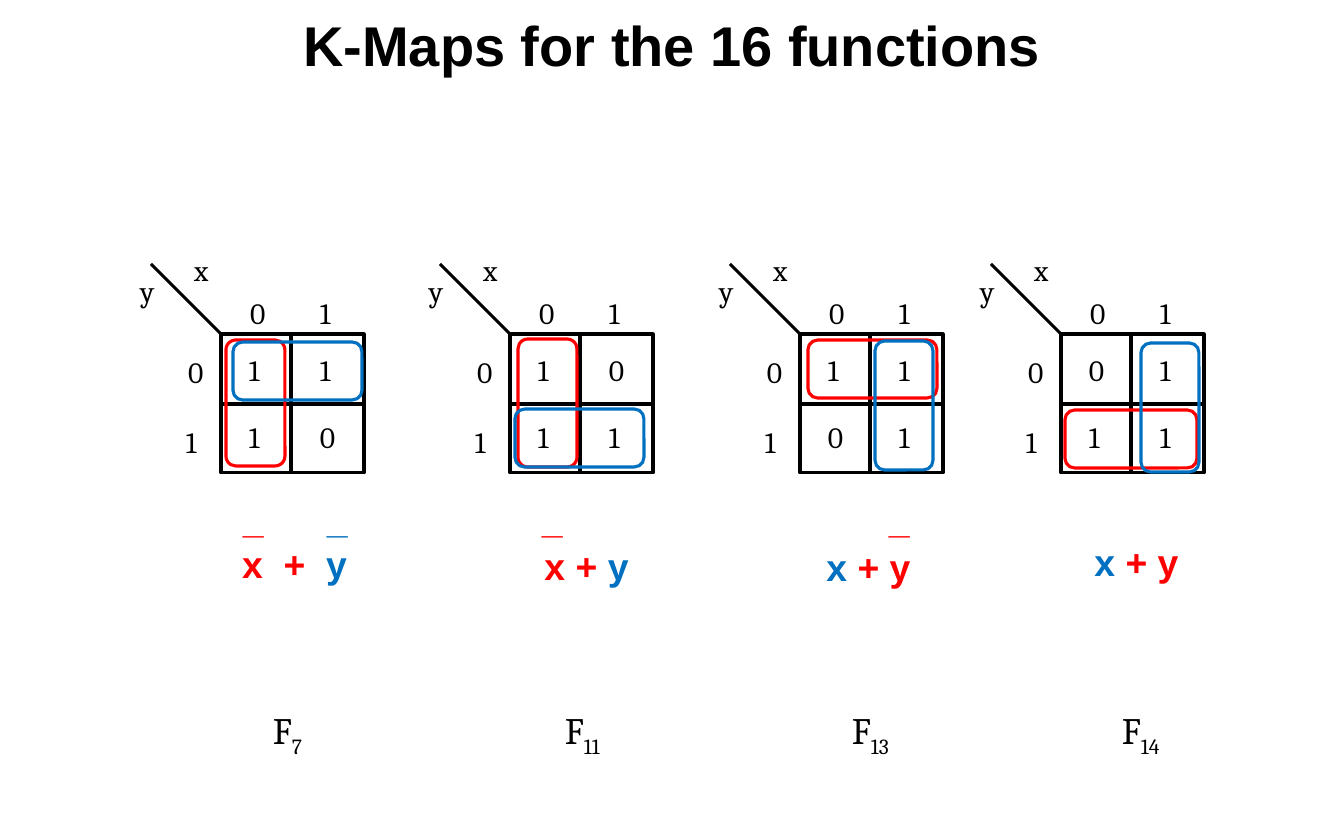
from dataclasses import dataclass

from pptx import Presentation
from pptx import util as u
from pptx.dml.color import RGBColor
from pptx.enum import shapes, text
from pptx.oxml.ns import qn


@dataclass(frozen=True)
class Theme:
    black: RGBColor = RGBColor(0, 0, 0)
    white: RGBColor = RGBColor(255, 255, 255)
    red: RGBColor = RGBColor(255, 0, 0)
    blue: RGBColor = RGBColor(0, 0x70, 0xC0)
    sans: str = "Arial"
    serif: str = "Cambria"
    title_size: int = 36
    formula_size: int = 24
    label_size: int = 19
    line_width: int = 2


THEME = Theme()
SLIDE_SIZE = (1344, 840)
TITLE = "K-Maps for the 16 functions"
TITLE_BOX = (112, 2, 1120, 84)

# Loops and bars are measured from the left of their grid; loops also from its top.
MAPS = [
    dict(left=221, cells=["11", "10"], red_loop=(5, 6, 59, 126), blue_loop=(12, 8, 129, 58),
         formula=[("x  +  ", THEME.red), ("y", THEME.blue)], formula_at=(-21, 536),
         bars=[(11, THEME.red), (95, THEME.blue)], number="7", name_at=41),
    dict(left=510, cells=["10", "11"], red_loop=(8, 5, 59, 128), blue_loop=(5, 75, 129, 58),
         formula=[("x + ", THEME.red), ("y", THEME.blue)], formula_at=(-18, 538),
         bars=[(21, THEME.red)], number="11", name_at=44),
    dict(left=800, cells=["11", "01"], red_loop=(8, 6, 129, 58), blue_loop=(75, 7, 58, 129),
         formula=[("x", THEME.blue), (" + y", THEME.red)], formula_at=(-26, 539),
         bars=[(78, THEME.red)], number="13", name_at=41),
    dict(left=1061, cells=["01", "11"], red_loop=(4, 76, 132, 58), blue_loop=(80, 9, 58, 129),
         formula=[("x", THEME.blue), (" + y", THEME.red)], formula_at=(-19, 534),
         bars=[], number="14", name_at=50),
]

GRID_TOP, GRID_WIDTH, GRID_HEIGHT, HALF = 334, 143, 139, 70
LABELS = [("y", -81, -61), ("x", -27, -82), ("0", -33, 20), ("1", -35, 90),
          ("0", 29, -39), ("1", 99, -39)]
CELL_LEFTS, CELL_TOPS = (28, 99), (18, 85)
LABEL_WIDTH, CELL_WIDTH, LABEL_HEIGHT = 22, 15, 36
FORMULA_WIDTH, BAR_WIDTH, FORMULA_HEIGHT = 189, 39, 57
BAR_TOP, NAME_TOP = 491, 702


def px(value):
    return u.Emu(value * 914400 // 112)


def add_text(slide, box, runs, font, size, bold=False, centred=False, wrap=True, inset=True):
    """Add one line of (wording, colour) runs and return its paragraph."""
    frame = slide.shapes.add_textbox(*map(px, box)).text_frame
    frame.word_wrap = wrap
    frame.auto_size = text.MSO_AUTO_SIZE.SHAPE_TO_FIT_TEXT
    if not inset:
        frame.margin_left = frame.margin_right = frame.margin_top = frame.margin_bottom = 0
    paragraph = frame.paragraphs[0]
    paragraph.alignment = text.PP_ALIGN.CENTER if centred else text.PP_ALIGN.LEFT
    for wording, colour in runs:
        run = paragraph.add_run()
        run.text = wording
        run.font.name, run.font.size, run.font.bold = font, u.Pt(size), bold
        run.font.color.rgb = colour
    return paragraph


def add_outline(slide, kind, box, colour, fill=None):
    shape = slide.shapes.add_shape(kind, *map(px, box))
    shape.shadow.inherit = False
    if fill is None:
        shape.fill.background()
    else:
        shape.fill.solid()
        shape.fill.fore_color.rgb = fill
    shape.line.color.rgb = colour
    shape.line.width = u.Pt(THEME.line_width)


def add_line(slide, *ends):
    line = slide.shapes.add_connector(shapes.MSO_CONNECTOR.STRAIGHT, *map(px, ends))
    line.line.color.rgb = THEME.black
    line.line.width = u.Pt(THEME.line_width)
    properties = line._element.spPr
    properties.append(properties.makeelement(qn("a:effectLst"), {}))


def add_grid(slide, left, cells):
    top = GRID_TOP
    add_outline(slide, shapes.MSO_SHAPE.RECTANGLE, (left, top, GRID_WIDTH, GRID_HEIGHT),
                THEME.black, THEME.white)
    add_line(slide, left + GRID_WIDTH, top + HALF, left, top + HALF)
    add_line(slide, left + HALF, top + GRID_HEIGHT, left + HALF, top)
    add_line(slide, left - HALF, top - HALF, left, top)
    entries = [(*label, LABEL_WIDTH) for label in LABELS]
    entries += [(digit, x, y, CELL_WIDTH)
                for row, y in zip(cells, CELL_TOPS) for digit, x in zip(row, CELL_LEFTS)]
    for wording, x, y, width in entries:
        add_text(slide, (left + x, top + y, width, LABEL_HEIGHT), [(wording, THEME.black)],
                 THEME.serif, THEME.label_size, wrap=False, inset=False)


def add_map(slide, item):
    left = item["left"]
    add_grid(slide, left, item["cells"])
    for loop, colour in ((item["red_loop"], THEME.red), (item["blue_loop"], THEME.blue)):
        x, y, width, height = loop
        add_outline(slide, shapes.MSO_SHAPE.ROUNDED_RECTANGLE,
                    (left + x, GRID_TOP + y, width, height), colour)

    x, top = item["formula_at"]
    add_text(slide, (left + x, top, FORMULA_WIDTH, FORMULA_HEIGHT), item["formula"],
             THEME.sans, THEME.formula_size, bold=True, centred=True)
    for x, colour in item["bars"]:
        add_text(slide, (left + x, BAR_TOP, BAR_WIDTH, FORMULA_HEIGHT), [("_", colour)],
                 THEME.sans, THEME.formula_size, bold=True)

    number = item["number"]
    name = add_text(slide, (left + item["name_at"], NAME_TOP, 44 + 12 * len(number), FORMULA_HEIGHT),
                    [("F", THEME.black), (number, THEME.black)],
                    THEME.serif, THEME.formula_size, wrap=False)
    name.runs[1].font._element.set("baseline", "-25000")


def main():
    presentation = Presentation()
    presentation.slide_width, presentation.slide_height = map(px, SLIDE_SIZE)
    slide = presentation.slides.add_slide(presentation.slide_layouts[6])
    title = add_text(slide, TITLE_BOX, [(TITLE, THEME.black)], THEME.sans, THEME.title_size,
                     bold=True, centred=True)
    title._parent.auto_size = text.MSO_AUTO_SIZE.NONE
    title._parent.vertical_anchor = text.MSO_ANCHOR.MIDDLE
    for item in MAPS:
        add_map(slide, item)
    presentation.save("out.pptx")


if __name__ == "__main__":
    main()
